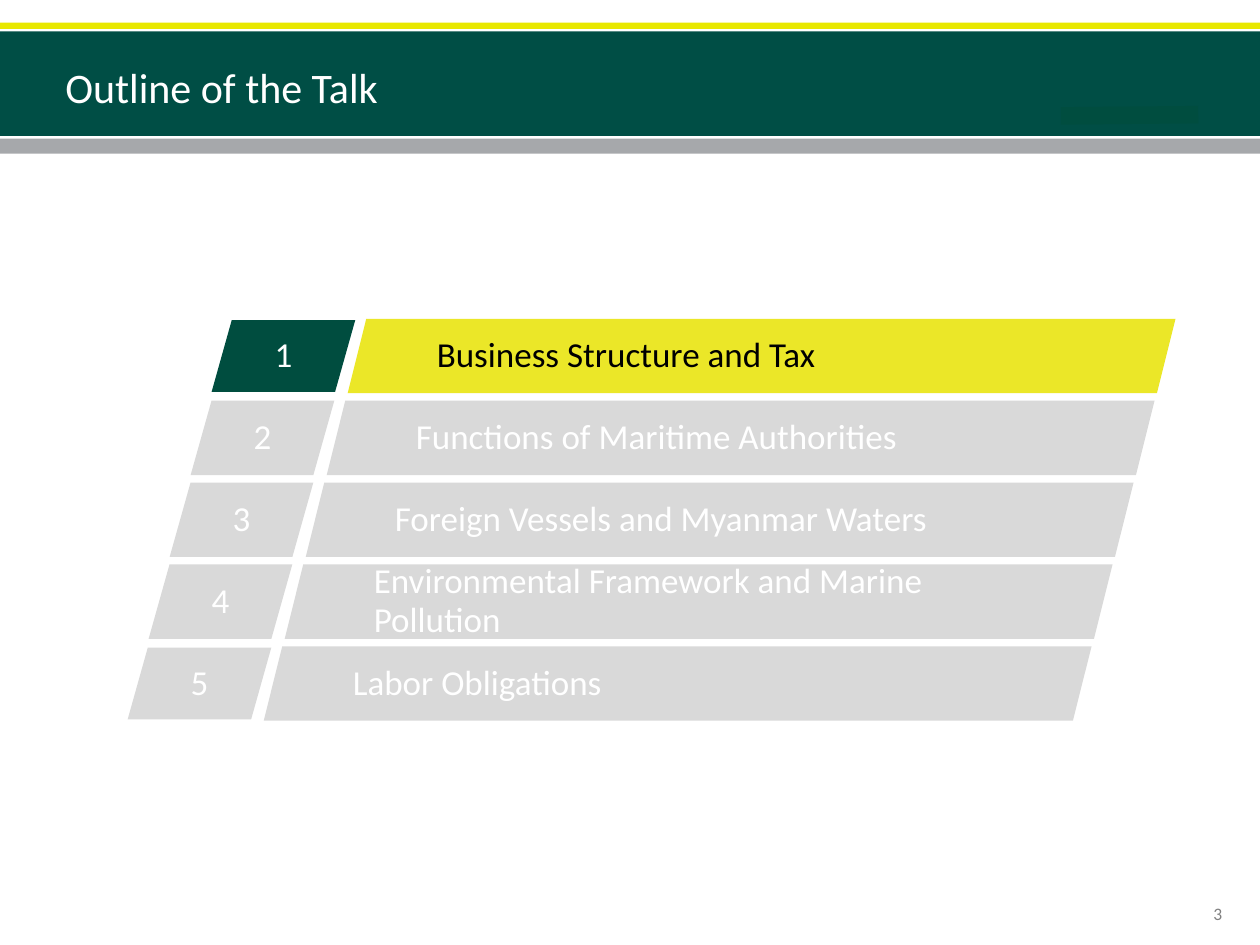
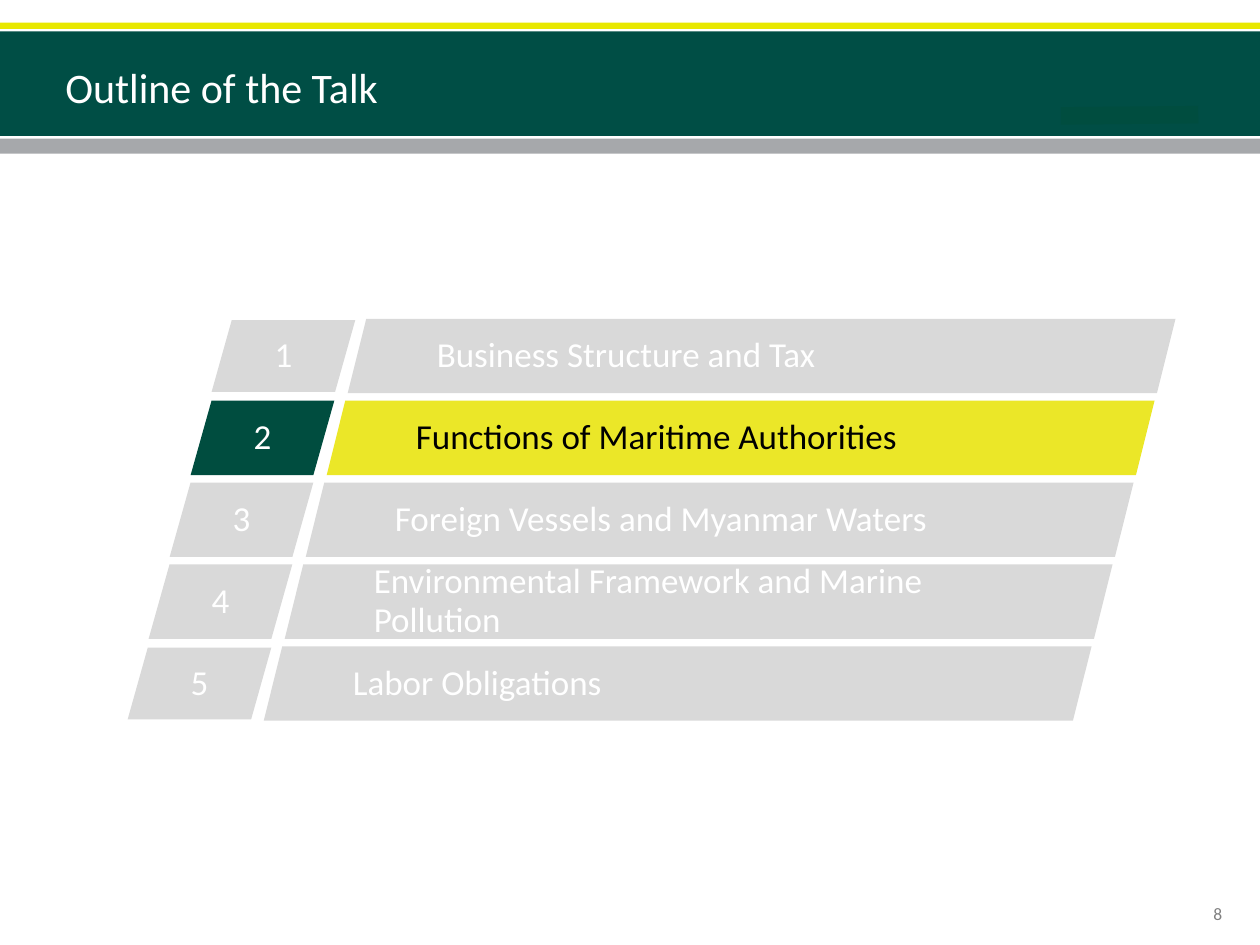
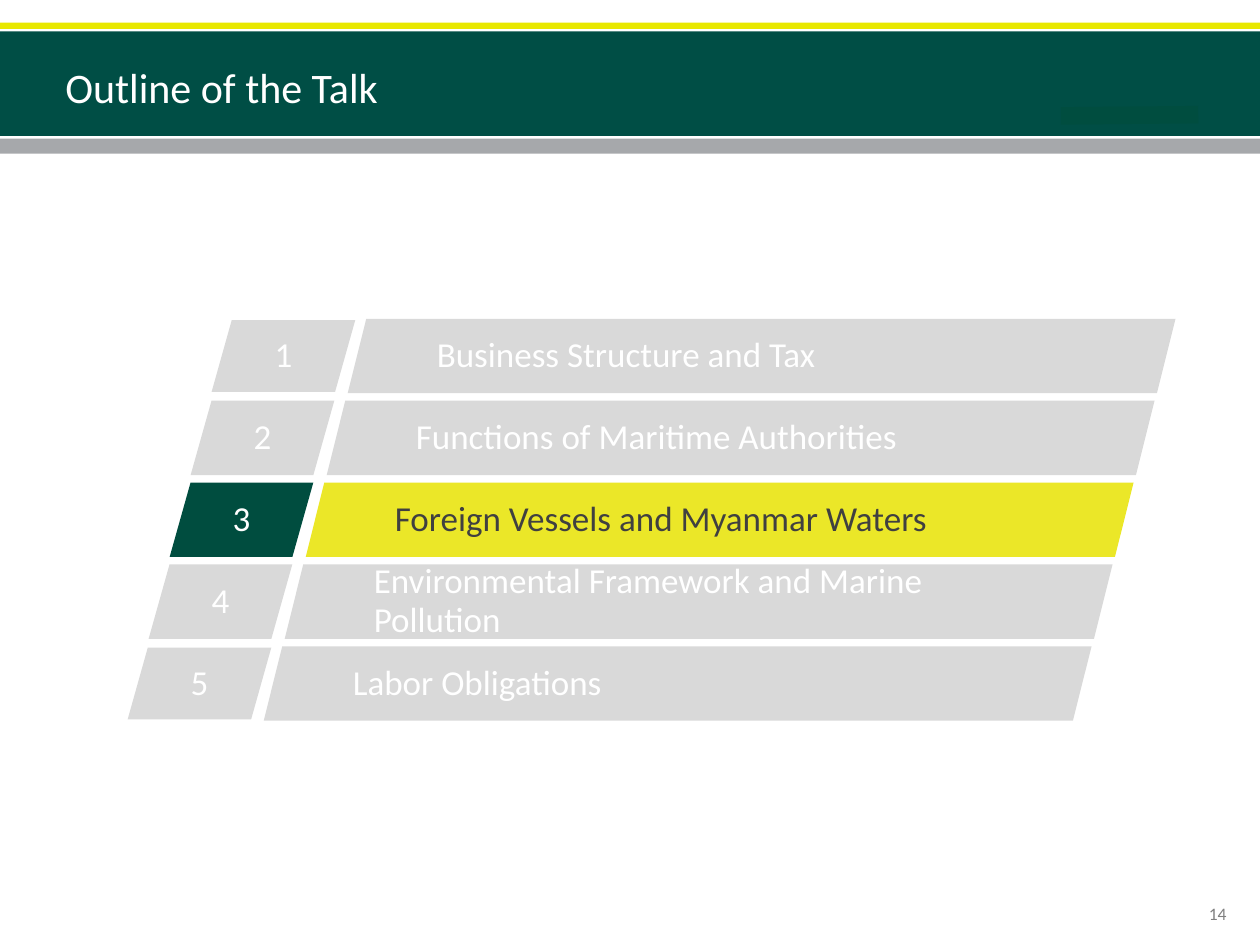
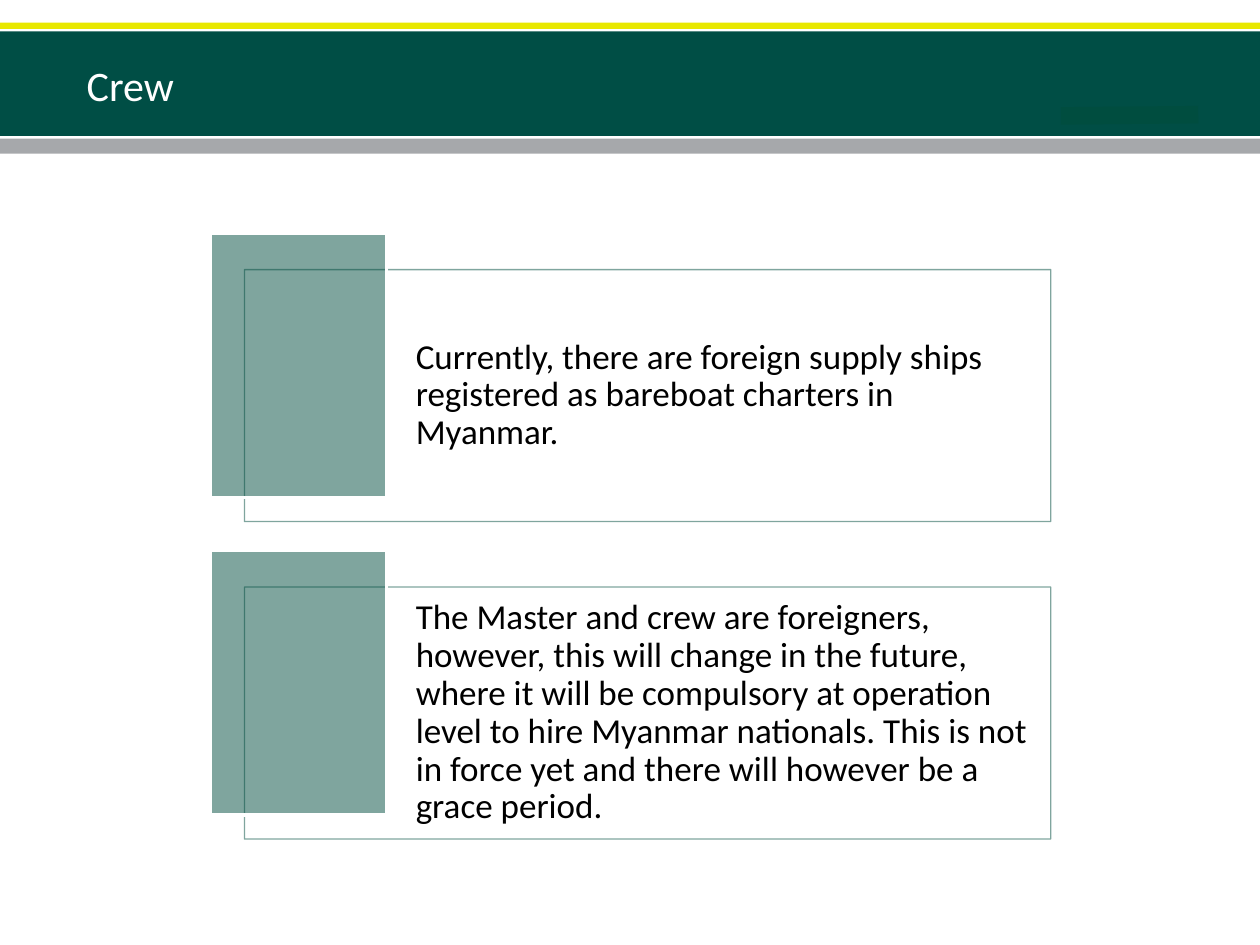
"""Build three outline slides and one slide on crews."""
from lxml import etree
from pptx import Presentation
from pptx import util as u
from pptx.dml.color import RGBColor
from pptx.enum import shapes, text
from pptx.oxml import ns

FONT = "Calibri"
C = {
    "band": "004E45", "green": "004D3F", "lime": "E8E800", "bar": "A6A8AB",
    "yellow": "EBE728", "idle": "D9D9D9", "number": "808080",
    "white": "FFFFFF", "black": "000000", "dark": "404040",
}
SHAPE = shapes.MSO_SHAPE
CENTER = text.PP_ALIGN.CENTER
LEFT = text.PP_ALIGN.LEFT
MIDDLE = text.MSO_ANCHOR.MIDDLE
TOP = text.MSO_ANCHOR.TOP


def add_box(s, kind, x, y, w, h, fill=None, line=None, width=1, fill_alpha=100, line_alpha=100):
    sp = s.shapes.add_shape(kind, *[u.Inches(v) for v in (x, y, w, h)])
    sp.shadow.inherit = False
    for paint, color, alpha in ((sp.fill, fill, fill_alpha), (sp.line.fill, line, line_alpha)):
        if color is None:
            paint.background()
            continue
        paint.solid()
        paint.fore_color.rgb = RGBColor.from_string(C[color])
        if alpha < 100:
            owner = sp.line._ln if paint is sp.line.fill else sp._element.spPr
            clr = owner.find(ns.qn("a:solidFill"))[0]
            etree.SubElement(clr, ns.qn("a:alpha")).set("val", str(alpha * 1000))
    if line:
        sp.line.width = u.Pt(width)
    return sp


def write(sp, words, size, color, align=LEFT, anchor=MIDDLE, spacing=None):
    tf = sp.text_frame
    tf.word_wrap = True
    tf.vertical_anchor = anchor
    p = tf.paragraphs[0]
    p.text = words
    p.alignment = align
    if spacing:
        p.line_spacing = spacing
    p.font.name = FONT
    p.font.size = u.Pt(size)
    p.font.color.rgb = RGBColor.from_string(C[color])
    return tf


prs = Presentation()
prs.slide_width, prs.slide_height = u.Inches(10), u.Inches(7.5)

bands = [(0.25, 0.83, "band"), (0.18, 0.05, "lime"), (1.1, 0.12, "bar")]
titles = [("Outline of the Talk", 0.42, 0.3, 0.77)] * 3 + [("Crew", 0.59, 0.28, 0.79)]
for title, x, y, h in titles:
    s = prs.slides.add_slide(prs.slide_layouts[6])
    for top, height, color in bands:
        add_box(s, SHAPE.RECTANGLE, 0, top, 10, height, color)
    cx = s.shapes.add_connector(shapes.MSO_CONNECTOR.STRAIGHT, u.Inches(8.42), u.Inches(0.92),
                                u.Inches(9.51), u.Inches(0.91))
    cx.line.color.rgb = RGBColor.from_string(C["green"])
    cx.line.width = u.Pt(10)
    etree.SubElement(cx._element.spPr, ns.qn("a:effectLst"))
    tb = s.shapes.add_textbox(u.Inches(x), u.Inches(y), u.Inches(7.5), u.Inches(h))
    write(tb, title, 24, "white")

topics = [
    "Business Structure and Tax",
    "Functions of Maritime Authorities",
    "Foreign Vessels and Myanmar Waters",
    "Environmental Framework and Marine Pollution",
    "Labor Obligations",
]
outlines = [("3", 0, "black"), ("8", 1, "black"), ("14", 2, "dark")]
for s, (page, current, ink) in zip(prs.slides, outlines):
    tb = s.shapes.add_textbox(u.Inches(9.33), u.Inches(7.12), u.Inches(0.67), u.Inches(0.38))
    write(tb, page, 10, "number", CENTER, TOP)
    for i, topic in enumerate(topics):
        active = i == current
        x, y = 1.68 - i / 6, 2.53 + 0.65 * i
        trim = 0.01 if i in (0, 4) else 0
        sp = add_box(s, SHAPE.PARALLELOGRAM, x, y + trim, 1.14, 0.59 - 2 * trim,
                     "green" if active else "idle")
        sp.adjustments[0] = 0.281
        write(sp, str(i + 1), 20, "white", CENTER, spacing=0.93)
        sp = add_box(s, SHAPE.PARALLELOGRAM, x + 1.08, y, 6.57, 0.59,
                     "yellow" if active else "idle")
        write(sp, topic, 20, ink if active else "white", spacing=0.93)

notes = [
    "Currently, there are foreign supply ships registered as bareboat charters in Myanmar.",
    "The Master and crew are foreigners, however, this will change in the future, where it will "
    "be compulsory at operation level to hire Myanmar nationals. This is not in force yet and "
    "there will however be a grace period.",
]
s = prs.slides[3]
for i, note in enumerate(notes):
    y = 2.14 + 2.52 * i
    sp = add_box(s, SHAPE.RECTANGLE, 1.94, y, 6.4, 2, line="green", width=0.75, line_alpha=50)
    tf = write(sp, note, 20, "black", spacing=0.9)
    tf.margin_left = u.Inches(1.36)
    tf.margin_top = tf.margin_right = tf.margin_bottom = u.Inches(0.08)
    add_box(s, SHAPE.RECTANGLE, 1.67, y - 0.29, 1.4, 2.1, "green", "white", 2, fill_alpha=50)

prs.save("out.pptx")
